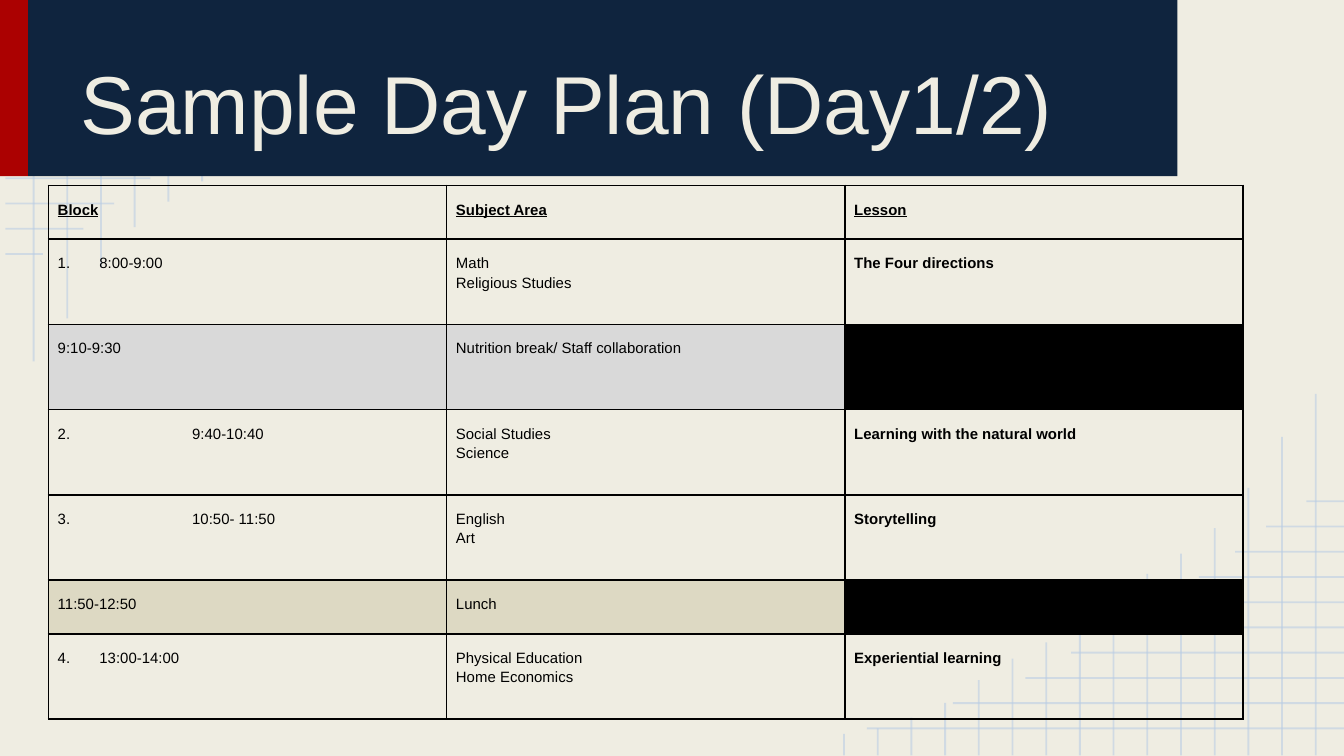
from lxml.etree import SubElement
from pptx import Presentation
from pptx.dml.color import RGBColor
from pptx.enum.shapes import MSO_CONNECTOR, MSO_SHAPE
from pptx.enum.text import MSO_ANCHOR
from pptx.oxml.ns import qn
from pptx.util import Inches, Pt

COLORS = {
    "cream": "EFEDE2", "grid": "B7CCE4", "red": "AB0101", "navy": "0F243E",
    "black": "000000", "gray": "D9D9D9", "tan": "DDD9C3",
}


def rgb(name):
    return RGBColor.from_string(COLORS[name])


def write(frame, text, size=8, color="black", bold=False, underline=False,
          spacing=None, tab=None, margins=(0.1, 0.1)):
    frame.word_wrap = True
    frame.margin_left = frame.margin_right = Inches(margins[0])
    frame.margin_top = frame.margin_bottom = Inches(margins[1])
    for index, line in enumerate(text.split("\n")):
        paragraph = frame.add_paragraph() if index else frame.paragraphs[0]
        paragraph.line_spacing = spacing
        if tab:
            tabs = SubElement(paragraph._p.get_or_add_pPr(), qn("a:tabLst"))
            SubElement(tabs, qn("a:tab"), pos=str(Inches(tab)), algn="l")
        run = paragraph.add_run()
        run.text = line
        run.font.name = "Arial"
        run.font.size = Pt(size)
        run.font.bold = bold
        run.font.underline = underline
        run.font.color.rgb = rgb(color)


prs = Presentation()
prs.slide_width = Inches(10)
prs.slide_height = prs.slide_width * 9 // 16
slide = prs.slides.add_slide(prs.slide_layouts[6])
slide.background.fill.solid()
slide.background.fill.fore_color.rgb = rgb("cream")

row_ends = [3.59, 2.95, 2.41, 2.07, 1.67, 1.37, 1.12, 0.85, 0.62, 0.32]
column_ends = [2.69, 2.37, 1.99, 1.69, 1.5, 1.35, 1.16, 1, 0.84, 0.72,
               0.56, 0.39, 0.28, 0.2, 0.16]
grid_lines = []
for i, end in enumerate(row_ends):
    y = 0.2 + i * 1.69 / 9
    grid_lines.append((0.04, y, end, y))
for i, end in enumerate(column_ends):
    x = 0.25 + i * 3.51 / 14
    grid_lines.append((x, end, x, 0))
rotated_lines = [(10.04 - x1, 5.62 - y1, 10.04 - x2, 5.62 - y2)
                 for x1, y1, x2, y2 in grid_lines]

for ends in grid_lines + rotated_lines:
    grid_line = slide.shapes.add_connector(
        MSO_CONNECTOR.STRAIGHT, *[Inches(v) for v in ends])
    grid_line.line.width = Pt(1)
    grid_line.line.color.rgb = rgb("grid")
    hue = grid_line._element.spPr.find(".//" + qn("a:srgbClr"))
    SubElement(hue, qn("a:alpha"), val="54000")
    SubElement(grid_line._element.spPr, qn("a:effectLst"))

for left, width, color in [(0, 0.21, "red"), (0.21, 8.55, "navy")]:
    band = slide.shapes.add_shape(
        MSO_SHAPE.RECTANGLE, Inches(left), Inches(-0.01), Inches(width), Inches(1.32))
    band.shadow.inherit = False
    band.fill.solid()
    band.fill.fore_color.rgb = rgb(color)
    band.line.fill.background()

title = slide.shapes.add_textbox(Inches(0.5), Inches(0.11), Inches(8), Inches(1.11))
title.text_frame.vertical_anchor = MSO_ANCHOR.BOTTOM
write(title.text_frame, "Sample Day Plan (Day1/2)", size=44, color="cream")

short_row = 0.4
tall_row = (3.97 - 2 * short_row) / 5
day_plan = [
    ("Block", "Subject Area", "Lesson", short_row, None, None),
    ("1.\t8:00-9:00", "Math\nReligious Studies", "The Four directions",
     tall_row, None, 0.31),
    ("9:10-9:30", "Nutrition break/ Staff collaboration", "", tall_row, "gray", None),
    ("2.\t9:40-10:40", "Social Studies\nScience",
     "Learning with the natural world", tall_row, None, 1),
    ("3.\t10:50- 11:50", "English\nArt", "Storytelling", tall_row, None, 1),
    ("11:50-12:50", "Lunch", "", short_row, "tan", None),
    ("4.\t13:00-14:00", "Physical Education\nHome Economics",
     "Experiential learning", tall_row, None, 0.31),
]
schedule = slide.shapes.add_table(
    len(day_plan), 3, Inches(0.36), Inches(1.38), Inches(8.89), Inches(3.97)).table
schedule.first_row = schedule.horz_banding = False

for r, (block, subject, lesson, height, row_fill, tab) in enumerate(day_plan):
    schedule.rows[r].height = Inches(height)
    for c, text in enumerate((block, subject, lesson)):
        cell = schedule.cell(r, c)
        if text:
            write(cell.text_frame, text, bold=r == 0 or c == 2, underline=r == 0,
                  spacing=1.15, tab=tab if c == 0 else None)
            cell.margin_left = cell.margin_right = Inches(0.07)
            cell.margin_top = cell.margin_bottom = Inches(0.1)
        properties = cell._tc.get_or_add_tcPr()
        for side in ("lnL", "lnR", "lnT", "lnB"):
            border = SubElement(properties, qn("a:" + side), w=str(Pt(1)))
            border_fill = SubElement(border, qn("a:solidFill"))
            SubElement(border_fill, qn("a:srgbClr"), val=COLORS["black"])
        cell_fill = row_fill if text else "black"
        if cell_fill:
            cell.fill.solid()
            cell.fill.fore_color.rgb = rgb(cell_fill)
        else:
            cell.fill.background()

prs.save("out.pptx")
